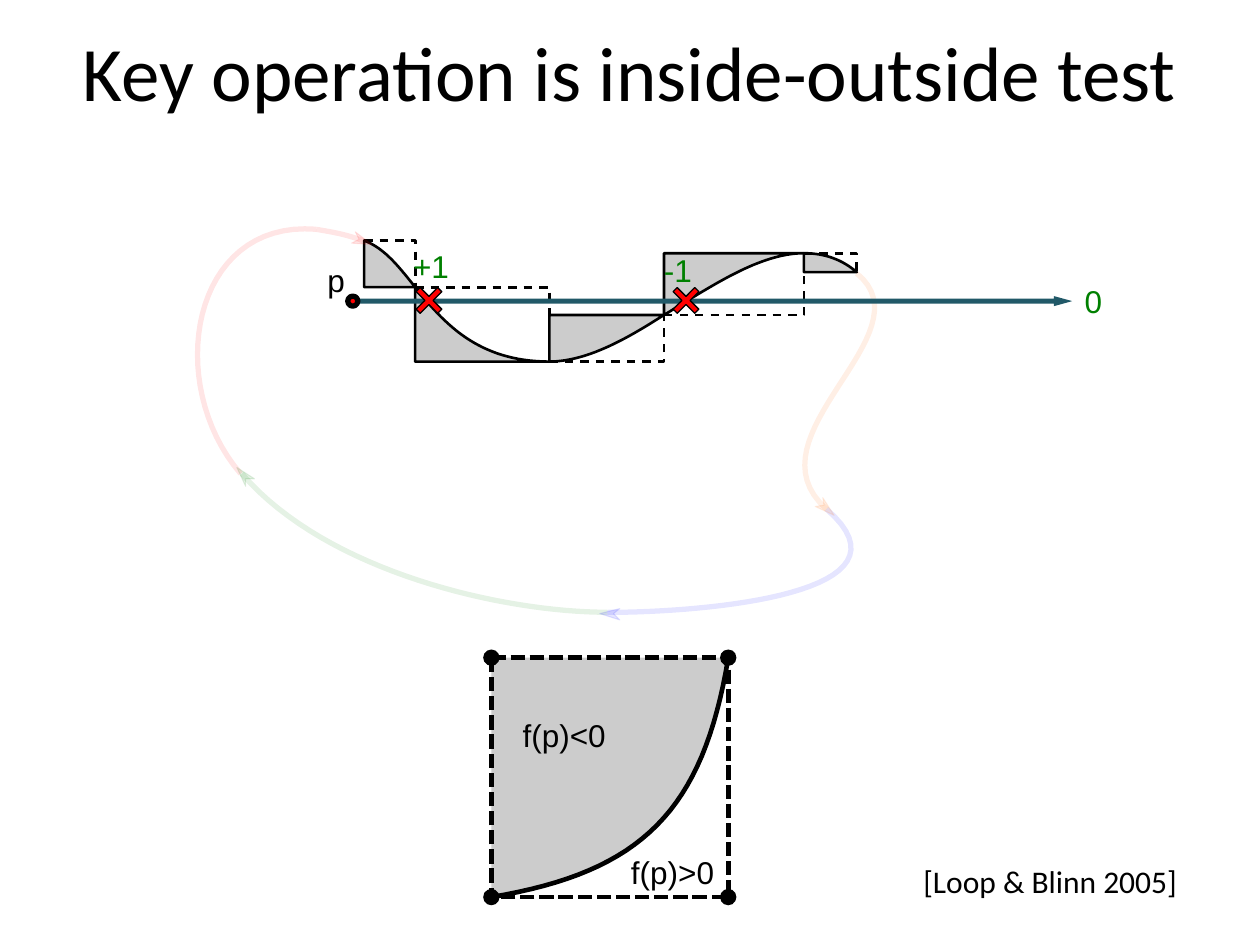
from dataclasses import dataclass

from lxml import etree
from pptx import Presentation
from pptx import util as u
from pptx.dml.color import RGBColor
from pptx.enum import shapes, text
from pptx.oxml.ns import qn

COLS, ROWS = 100, 75
Point = tuple[float, float]
Dash = tuple[int, int]


@dataclass(frozen=True)
class Theme:
    ink: str = "000000"
    shade: str = "CCCCCC"
    mark: str = "FF0000"
    ray: str = "215968"
    count: str = "008000"
    head: str = "Calibri"
    label: str = "Arial"
    big: float = 44
    small: float = 18
    thin: float = 1.5
    thick: float = 2.63
    route: float = 3
    faint: int = 10
    short: Dash = (320, 270)
    long: Dash = (310, 105)


@dataclass(frozen=True)
class Curve:
    a: Point
    b: Point
    c: Point
    d: Point

    def trace(self, steps: int = 32) -> list[Point]:
        def blend(t: float, axis: int) -> float:
            s = 1 - t
            return (s**3 * self.a[axis] + 3 * s * s * t * self.b[axis]
                    + 3 * s * t * t * self.c[axis] + t**3 * self.d[axis])
        return [(blend(n / steps, 0), blend(n / steps, 1))
                for n in range(steps + 1)]

    @property
    def inner(self) -> Point:
        return self.a[0], self.d[1]

    @property
    def outer(self) -> Point:
        return self.d[0], self.a[1]


@dataclass(frozen=True)
class Route:
    color: str
    curves: tuple[Curve, ...]
    tip: tuple[Point, ...]


@dataclass(frozen=True)
class Label:
    words: str
    box: tuple[float, float, float, float]
    color: str
    font: str
    wrap: bool = False


T = Theme()
PIECES = (
    Curve((63.8, 20.1), (65.3, 20.1), (66.7, 20.5), (68, 21.6)),
    Curve((28.9, 19.1), (30.5, 19.7), (31.6, 21.1), (32.95, 22.8)),
    Curve((32.95, 22.8), (35.2, 25.6), (37.9, 28.7), (43.6, 28.7)),
    Curve((43.6, 28.7), (46.5, 28.7), (49.6, 27), (52.7, 25)),
    Curve((52.7, 25), (56.5, 22.7), (60.3, 20.1), (63.8, 20.1)),
)
CELL = Curve((39, 71.2), (51, 69.2), (55.8, 64.3), (57.8, 52.2))
ROUTES = (
    Route("008000",
          (Curve((48.2, 48.6), (40.1, 48.6), (26, 45.5), (19.2, 37.6)),),
          ((19.5, 38), (20.2, 38), (18.8, 37.1), (19.5, 38.6))),
    Route("0000FF",
          (Curve((65.6, 40.4), (73.3, 47.1), (56.2, 48.6), (48.2, 48.6)),),
          ((48.7, 48.7), (49.2, 48.3), (47.6, 48.7), (49.2, 49.2))),
    Route("FF6600",
          (Curve((68, 21.7), (73.9, 26.5), (59, 34.6), (65.6, 40.4)),),
          ((65.4, 40.1), (64.7, 40.2), (66.2, 40.9), (65.3, 39.5))),
    Route("FF0000",
          (Curve((19.1, 37.6), (13, 30.5), (15.1, 17.4), (25.1, 18.2)),
           Curve((25.1, 18.2), (26.3, 18.4), (27.5, 18.6), (28.8, 19.1))),
          ((28.5, 19), (27.9, 19.3), (29.5, 19.4), (28.2, 18.4))),
)
LABELS = (
    Label("0", (85.1, 21.9, 4.9, 4), T.count, T.label, True),
    Label("p", (25, 20.2, 3.4, 4), T.ink, T.label),
    Label("f(p)<0", (40.5, 56.3, 8.7, 4), T.ink, T.label),
    Label("f(p)>0", (49.1, 67.2, 8.7, 4), T.ink, T.label),
    Label("[Loop & Blinn 2005]", (72.3, 67.9, 27.7, 7.1), T.ink, T.head, True),
    Label("-1", (51.7, 19.4, 4.9, 4), T.count, T.label, True),
    Label("+1", (31.8, 19.1, 4.9, 4), T.count, T.label),
)

deck = Presentation()
deck.slide_width, deck.slide_height = u.Inches(10), u.Inches(7.5)
page = deck.slides.add_slide(deck.slide_layouts[6])


def place(x: float, y: float) -> tuple[int, int]:
    return (round(x * deck.slide_width / COLS),
            round(y * deck.slide_height / ROWS))


def style(shape, fill: str | None = None, line: str | None = None,
          width: float = 0, alpha: int = 100, dash: Dash | None = None) -> None:
    shape.shadow.inherit = False
    if fill:
        shape.fill.solid()
        shape.fill.fore_color.rgb = RGBColor.from_string(fill)
    else:
        shape.fill.background()
    if line:
        shape.line.color.rgb = RGBColor.from_string(line)
        shape.line.width = u.Pt(width)
    else:
        shape.line.fill.background()
    if alpha < 100:
        for tint in shape._element.spPr.iter(qn("a:srgbClr")):
            etree.SubElement(tint, qn("a:alpha"), val=str(alpha * 1000))
    if dash:
        rule = etree.SubElement(shape.line._ln, qn("a:custDash"))
        etree.SubElement(rule, qn("a:ds"),
                         d=str(dash[0] * 1000), sp=str(dash[1] * 1000))


def outline(points: list[Point], closed: bool = False, **look) -> None:
    spots = [place(*point) for point in points]
    pen = page.shapes.build_freeform(*spots[0])
    pen.add_line_segments(spots[1:], close=closed)
    style(pen.convert_to_shape(), **look)


def preset(kind, x: float, y: float, w: float, h: float,
           adjust: tuple[float, ...] = (), **look) -> None:
    shape = page.shapes.add_shape(kind, *place(x, y), *place(w, h))
    for n, value in enumerate(adjust):
        shape.adjustments[n] = value
    style(shape, **look)


def write(label: Label, size: float = T.small, title: bool = False) -> None:
    x, y, w, h = label.box
    frame = page.shapes.add_textbox(*place(x, y), *place(w, h)).text_frame
    frame.word_wrap = label.wrap
    para = frame.paragraphs[0]
    para.text = label.words
    para.font.name = label.font
    para.font.size = u.Pt(size)
    para.font.color.rgb = RGBColor.from_string(label.color)
    if title:
        frame.vertical_anchor = text.MSO_ANCHOR.MIDDLE
        para.alignment = text.PP_ALIGN.CENTER


def follow(route: Route) -> None:
    for curve in route.curves:
        outline(curve.trace(), line=route.color, width=T.route, alpha=T.faint)
    outline(route.tip, True, fill=route.color, line=route.color,
            width=0.63, alpha=T.faint)


def main() -> None:
    kind = shapes.MSO_SHAPE
    for piece in PIECES:
        outline([piece.inner, *piece.trace()], True,
                fill=T.shade, line=T.ink, width=T.thin)
        outline([piece.a, piece.outer, piece.d],
                line=T.ink, width=T.thin, dash=T.short)
    for route in ROUTES:
        follow(route)
    write(Label("Key operation is inside-outside test", (0, 1.3, COLS, 8.7),
                T.ink, T.head, True), T.big, True)
    preset(kind.RIGHT_ARROW, 27.6, 23.5, 57.5, 0.8, (0.5, 1.82), fill=T.ray)
    preset(kind.OVAL, 27.6, 23.5, 0.8, 0.8, fill=T.mark, line=T.ink, width=3)

    corners = [CELL.inner, CELL.d, CELL.outer, CELL.a]
    outline([CELL.inner, *CELL.trace()], True, fill=T.shade)
    outline(CELL.trace(), line=T.ink, width=T.thick)
    outline(corners, True, line=T.ink, width=T.thick, dash=T.long)
    for x, y in corners:
        preset(kind.OVAL, x - 0.65, y - 0.65, 1.3, 1.3, fill=T.ink)
    for x in (52.8, 32.4):
        preset(kind.MATH_MULTIPLY, x, 22.2, 3.3, 3.3, (0.14,),
               fill=T.mark, line=T.ink, width=0.75)
    for label in LABELS:
        write(label)
    deck.save("out.pptx")


if __name__ == "__main__":
    main()
